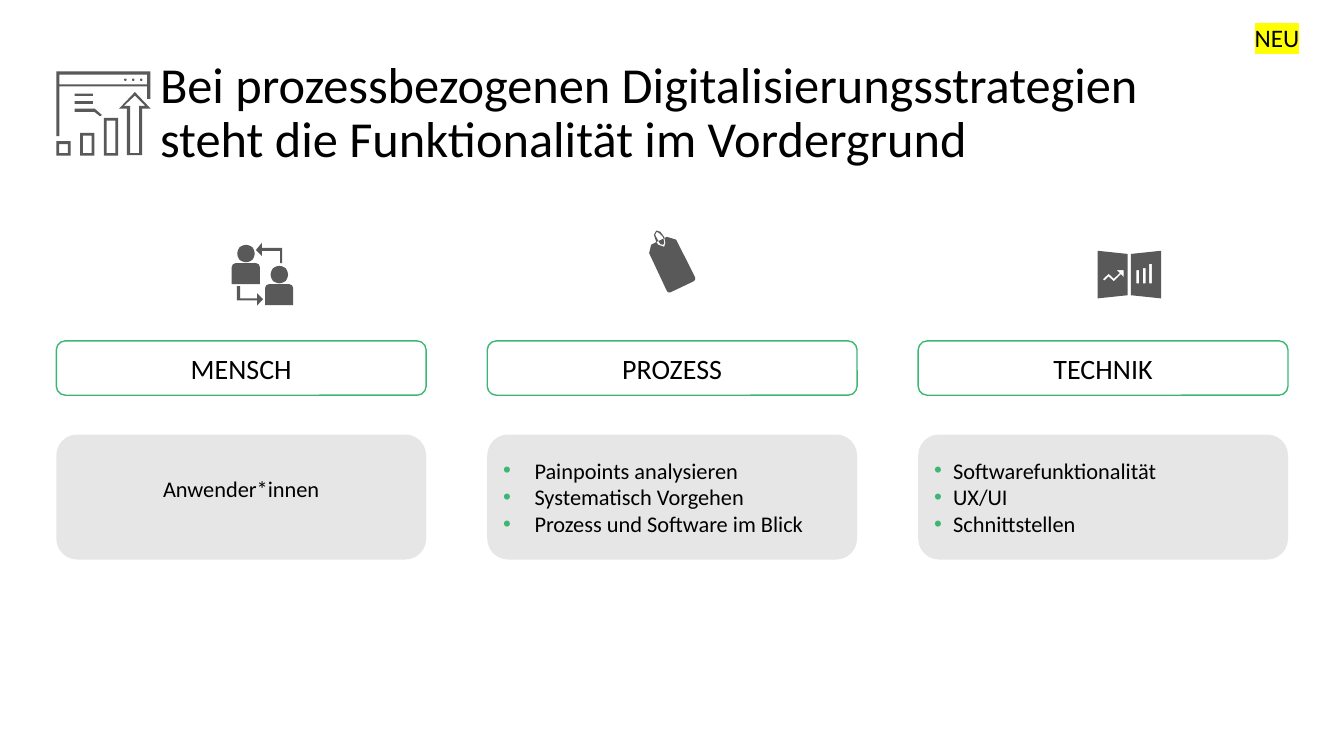
from dataclasses import dataclass
from math import cos, pi, sin

from lxml.etree import SubElement
from pptx import Presentation
from pptx.dml.color import RGBColor
from pptx.enum.shapes import MSO_SHAPE
from pptx.enum.text import MSO_ANCHOR, MSO_AUTO_SIZE, PP_ALIGN
from pptx.oxml.ns import qn
from pptx.util import Cm, Pt

FONT, BLACK, GREEN, GREY, DARK = "Calibri", "000000", "3CB675", "E7E6E6", "595959"
LEFT, STEP, WIDTH = 1.42, 10.86, 9.32
HEAD_TOP, HEAD_HIGH = 8.59, 1.37
BODY_TOP, BODY_HIGH = 10.95, 3.15

Path = list[tuple[float, float]]


@dataclass
class Rect:
    left: float
    top: float
    width: float
    height: float


@dataclass
class Column:
    head: str
    lines: list[str]
    indent: float


COLUMNS = [
    Column("MENSCH", ["Anwender*innen"], 0),
    Column("PROZESS", ["Painpoints analysieren", "Systematisch Vorgehen",
                       "Prozess und Software im Blick"], 0.79),
    Column("TECHNIK", ["Softwarefunktionalität", "UX/UI", "Schnittstellen"], 0.48),
]


def tint(target, code: str) -> None:
    target.rgb = RGBColor.from_string(code)


def apply(target, values: dict) -> None:
    for name, value in values.items():
        setattr(target, name, value)


def place(shape, rect: Rect) -> None:
    apply(shape, {"left": Cm(rect.left), "top": Cm(rect.top),
                  "width": Cm(rect.width), "height": Cm(rect.height)})


def write(part, text: str, size: float, **values):
    run = part.add_run()
    run.text = text
    apply(run.font, {"size": Pt(size), "name": FONT})
    tint(run.font.color, BLACK)
    apply(part, values)
    return run


def frame(shape, **values):
    apply(shape.text_frame, {"word_wrap": True, "auto_size": MSO_AUTO_SIZE.NONE,
                             "vertical_anchor": MSO_ANCHOR.MIDDLE, **values})
    return shape.text_frame


def panel(shapes, rect: Rect, fill: str = "", line: str = ""):
    shape = shapes.add_shape(MSO_SHAPE.FLOWCHART_ALTERNATE_PROCESS, 0, 0, 0, 0)
    place(shape, rect)
    shape.shadow.inherit = False
    shape.fill.background()
    shape.line.fill.background()
    if fill:
        shape.fill.solid()
        tint(shape.fill.fore_color, fill)
    if line:
        shape.line.fill.solid()
        tint(shape.line.color, line)
        shape.line.width = Pt(1)
    return shape


def bullet(part, indent: float) -> None:
    props = part._p.get_or_add_pPr()
    props.set("marL", str(Cm(indent)))
    props.set("indent", str(-Cm(indent)))
    SubElement(SubElement(props, qn("a:buClr")), qn("a:srgbClr"), val=GREEN)
    SubElement(props, qn("a:buFont"), typeface="Arial")
    SubElement(props, qn("a:buChar"), char="•")


def fill_list(holder, rect: Rect, column: Column) -> None:
    place(holder, rect)
    text = frame(holder, margin_left=Cm(0.4))
    for row, line in enumerate(column.lines):
        part = text.add_paragraph() if row else text.paragraphs[0]
        bullet(part, column.indent)
        write(part, line, 16, space_before=Pt(0), alignment=PP_ALIGN.LEFT)


def box(left: float, top: float, right: float, base: float) -> Path:
    return [(left, top), (right, top), (right, base), (left, base)]


def ring(left: float, top: float, right: float, base: float) -> list[Path]:
    return [box(left, top, right, base), box(left + 7, top + 7, right - 7, base - 6)]


def disc(x: float, y: float, size: float) -> Path:
    turns = [2 * pi * k / 24 for k in range(24)]
    return [(x + size * cos(t), y + size * sin(t)) for t in turns]


def icon(shapes, paths: list[Path]) -> None:
    pen = shapes.build_freeform(*paths[0][0], scale=Cm(0.01))
    for count, path in enumerate(paths):
        if count:
            pen.move_to(*path[0])
        pen.add_line_segments(path[1:], close=True)
    shape = pen.convert_to_shape()
    shape.shadow.inherit = False
    shape.fill.solid()
    tint(shape.fill.fore_color, DARK)
    shape.line.fill.background()


def window() -> list[Path]:
    paths = [
        [(142, 180), (379, 180), (379, 249), (371, 249),
         (371, 218), (150, 218), (150, 343), (142, 343)],
        box(150, 188, 371, 213),
        box(188, 236, 234, 242), box(188, 255, 234, 262),
        [(188, 274), (239, 274), (257, 290), (252, 293), (238, 282), (188, 282)],
        [(340, 232), (380, 274), (358, 274), (358, 391), (320, 391), (320, 274), (300, 274)],
        [(340, 241), (366, 267), (351, 267), (351, 386), (328, 386), (328, 267), (312, 267)],
    ]
    for k, top in enumerate((356, 335, 297)):
        paths += ring(142 + 60 * k, top, 178 + 60 * k, 392)
        paths.append(disc(316 + 20 * k, 201, 3))
    return paths


def people() -> list[Path]:
    paths = [
        [(645, 630), (660, 612), (660, 625), (711, 625), (711, 663),
         (706, 663), (706, 632), (660, 632), (660, 645)],
        [(597, 721), (605, 721), (605, 752), (648, 752), (648, 739),
         (663, 754), (648, 770), (648, 757), (597, 757)],
    ]
    for x, y in ((584, 663), (668, 716)):
        paths.append(disc(x + 36, y - 24, 22))
        paths.append([(x, y + 10), (x + 3, y + 3), (x + 10, y), (x + 61, y),
                      (x + 68, y + 3), (x + 71, y + 10), (x + 71, y + 53), (x, y + 53)])
    return paths


def label() -> list[Path]:
    return [
        [(1681, 597), (1704, 604), (1752, 699), (1752, 705), (1748, 709),
         (1689, 737), (1684, 737), (1681, 734), (1636, 638), (1641, 617), (1654, 610)],
        [(1654, 610), (1648, 592), (1654, 581), (1664, 584),
         (1674, 597), (1677, 612), (1674, 622), (1659, 617)],
        [(1659, 607), (1651, 592), (1655, 584), (1661, 587),
         (1671, 597), (1674, 612), (1671, 617), (1664, 615)],
    ]


def folder() -> list[Path]:
    paths = [[(x, 632), (y, 640), (y, 744), (x, 752)] for x, y in ((2766, 2842), (2926, 2850))]
    paths.append([(2779, 704), (2794, 690), (2807, 702), (2822, 688), (2814, 681), (2832, 681),
                  (2832, 699), (2825, 691), (2807, 709), (2794, 697), (2784, 707)])
    for k, top in enumerate((681, 676, 665)):
        paths.append(box(2864 + 16 * k, top, 2871 + 16 * k, 714))
    return paths


def main() -> None:
    deck = Presentation()
    apply(deck, {"slide_width": Cm(33.87), "slide_height": Cm(19.05)})
    slide = deck.slides.add_slide(deck.slide_layouts[3])
    shapes = slide.shapes
    title, *holders = slide.placeholders

    place(title, Rect(3.78, 1.04, 26.47, 3.68))
    write(frame(title).paragraphs[0],
          "Bei prozessbezogenen Digitalisierungsstrategien steht die Funktionalität im Vordergrund",
          36, line_spacing=0.9, alignment=PP_ALIGN.LEFT)

    for paths in (window(), people(), label(), folder()):
        icon(shapes, paths)

    for place_no, column in enumerate(COLUMNS):
        left = LEFT + STEP * place_no
        head = panel(shapes, Rect(left, HEAD_TOP, WIDTH, HEAD_HIGH), line=GREEN)
        write(frame(head).paragraphs[0], column.head, 20, alignment=PP_ALIGN.CENTER)
        rect = Rect(left, BODY_TOP, WIDTH, BODY_HIGH)
        body = panel(shapes, rect, fill=GREY)
        if column.indent:
            holder = holders.pop(0)
            body._element.addnext(holder._element)
            fill_list(holder, rect, column)
        else:
            write(frame(body, margin_bottom=Cm(0.57)).paragraphs[0],
                  column.lines[0], 16, alignment=PP_ALIGN.CENTER)

    badge = shapes.add_textbox(Cm(31.37), Cm(0.43), Cm(2.3), Cm(1.02))
    run = write(frame(badge).paragraphs[0], "NEU", 18)
    mark = SubElement(run.font._element, qn("a:highlight"))
    SubElement(mark, qn("a:srgbClr"), val="FFFF00")
    run.font._element.find(qn("a:latin")).addprevious(mark)

    deck.save("out.pptx")


if __name__ == "__main__":
    main()
